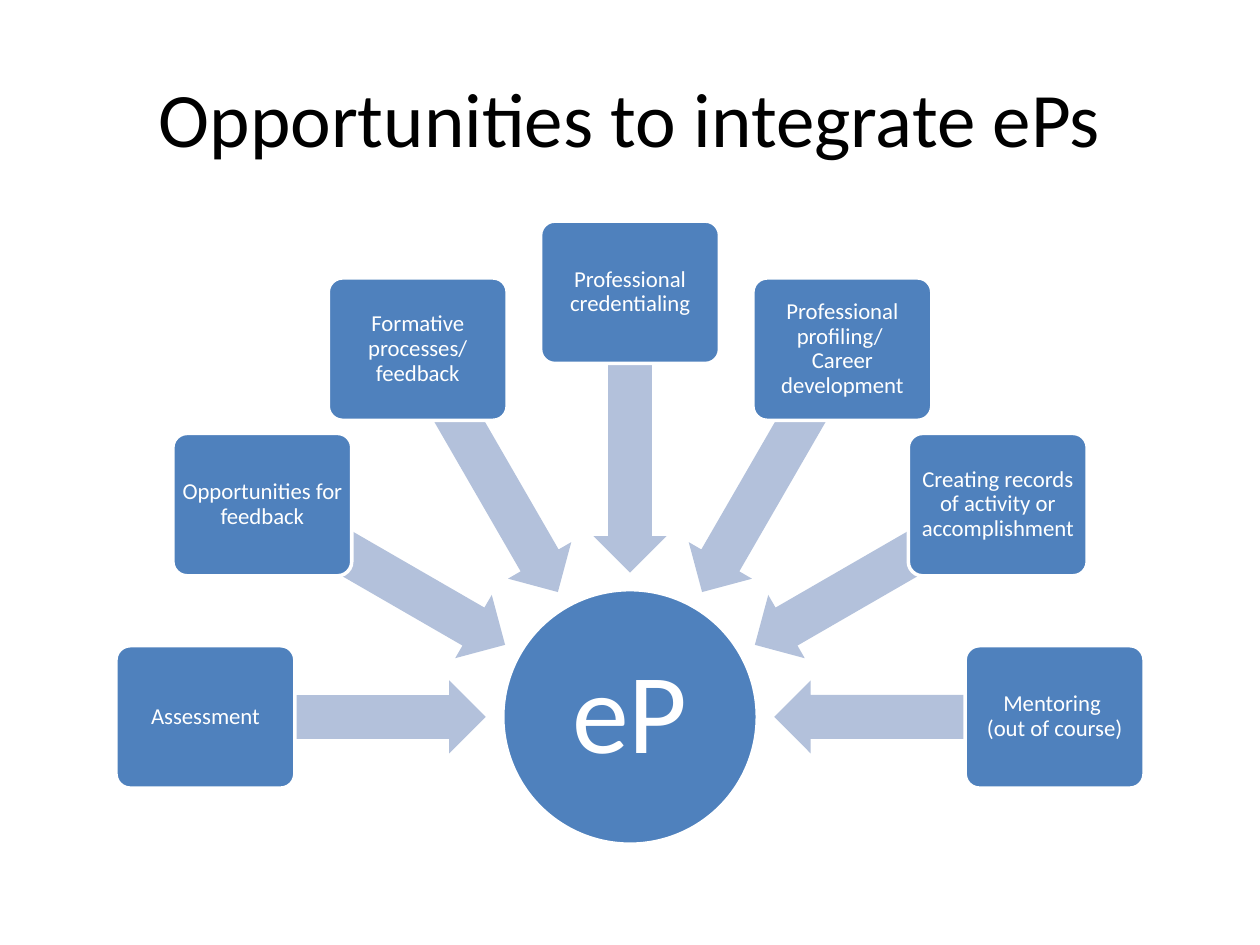
import math

import pptx
import pptx.dml.color
import pptx.enum.shapes
import pptx.enum.text
import pptx.util
from pptx.util import Inches

SHAPE = pptx.enum.shapes.MSO_SHAPE
FONT = "Calibri"
BLUE, PALE_BLUE, WHITE, BLACK = "4F81BD", "B3C1DB", "FFFFFF", "000000"

HUB_X, HUB_Y, HUB_SIZE = 5, 5.69, 2.02
BOX_RADIUS, BOX_WIDTH, BOX_HEIGHT = 3.37, 1.42, 1.13
ARROW_RADIUS, ARROW_LENGTH, ARROW_HEIGHT = 2.26, 2.23, 0.58
FIRST_ANGLE, ANGLE_STEP = 180, 30

OPPORTUNITIES = [
    "Assessment",
    "Opportunities for feedback",
    "Formative processes/ feedback",
    "Professional credentialing",
    "Professional profiling/ \nCareer development",
    "Creating records of activity or accomplishment",
    "Mentoring \n(out of course)",
]


def rgb(color):
    return pptx.dml.color.RGBColor.from_string(color)


def write_text(shape, text, size, color, margin=0.1, line_spacing=1.0):
    """Centre the text in the shape; a newline becomes a line break."""
    frame = shape.text_frame
    frame.word_wrap = True
    frame.vertical_anchor = pptx.enum.text.MSO_ANCHOR.MIDDLE
    frame.margin_left = frame.margin_right = Inches(margin)
    frame.margin_top = frame.margin_bottom = Inches(margin)
    paragraph = frame.paragraphs[0]
    paragraph.text = text
    paragraph.alignment = pptx.enum.text.PP_ALIGN.CENTER
    paragraph.line_spacing = line_spacing
    paragraph.font.name = FONT
    paragraph.font.size = pptx.util.Pt(size)
    paragraph.font.color.rgb = rgb(color)


def add_centered_shape(slide, kind, x, y, width, height, fill, line=None):
    """Add a preset shape whose centre is at x, y."""
    shape = slide.shapes.add_shape(
        kind, Inches(x - width / 2), Inches(y - height / 2), Inches(width), Inches(height)
    )
    shape.shadow.inherit = False
    shape.fill.solid()
    shape.fill.fore_color.rgb = rgb(fill)
    if line:
        shape.line.color.rgb = rgb(line)
        shape.line.width = pptx.util.Pt(2)
    else:
        shape.line.fill.background()
    return shape


def point_around_hub(radius, angle):
    radians = math.radians(angle)
    return HUB_X + radius * math.cos(radians), HUB_Y + radius * math.sin(radians)


def add_title(slide, text):
    title = slide.shapes.add_textbox(Inches(0.5), Inches(0.3), Inches(9), Inches(1.25))
    write_text(title, text, 44, BLACK)


def add_hub(slide, text):
    hub = add_centered_shape(
        slide, SHAPE.OVAL, HUB_X, HUB_Y, HUB_SIZE, HUB_SIZE, BLUE, WHITE
    )
    write_text(hub, text, 65, WHITE, margin=0.05, line_spacing=0.9)


def add_arrow(slide, angle):
    x, y = point_around_hub(ARROW_RADIUS, angle)
    arrow = add_centered_shape(
        slide, SHAPE.LEFT_ARROW, x, y, ARROW_LENGTH, ARROW_HEIGHT, PALE_BLUE
    )
    arrow.adjustments[0] = 0.6
    arrow.adjustments[1] = 0.5
    arrow.rotation = angle


def add_box(slide, text, angle):
    x, y = point_around_hub(BOX_RADIUS, angle)
    box = add_centered_shape(
        slide, SHAPE.ROUNDED_RECTANGLE, x, y, BOX_WIDTH, BOX_HEIGHT, BLUE, WHITE
    )
    box.adjustments[0] = 0.1
    write_text(box, text, 13, WHITE, margin=0.03, line_spacing=0.9)


def main():
    presentation = pptx.Presentation()
    presentation.slide_width = Inches(10)
    presentation.slide_height = Inches(7.5)
    slide = presentation.slides.add_slide(presentation.slide_layouts[6])

    add_title(slide, "Opportunities to integrate ePs")
    add_hub(slide, "eP")
    for index, opportunity in enumerate(OPPORTUNITIES):
        angle = FIRST_ANGLE + index * ANGLE_STEP
        add_arrow(slide, angle)
        add_box(slide, opportunity, angle)

    presentation.save("out.pptx")


if __name__ == "__main__":
    main()
